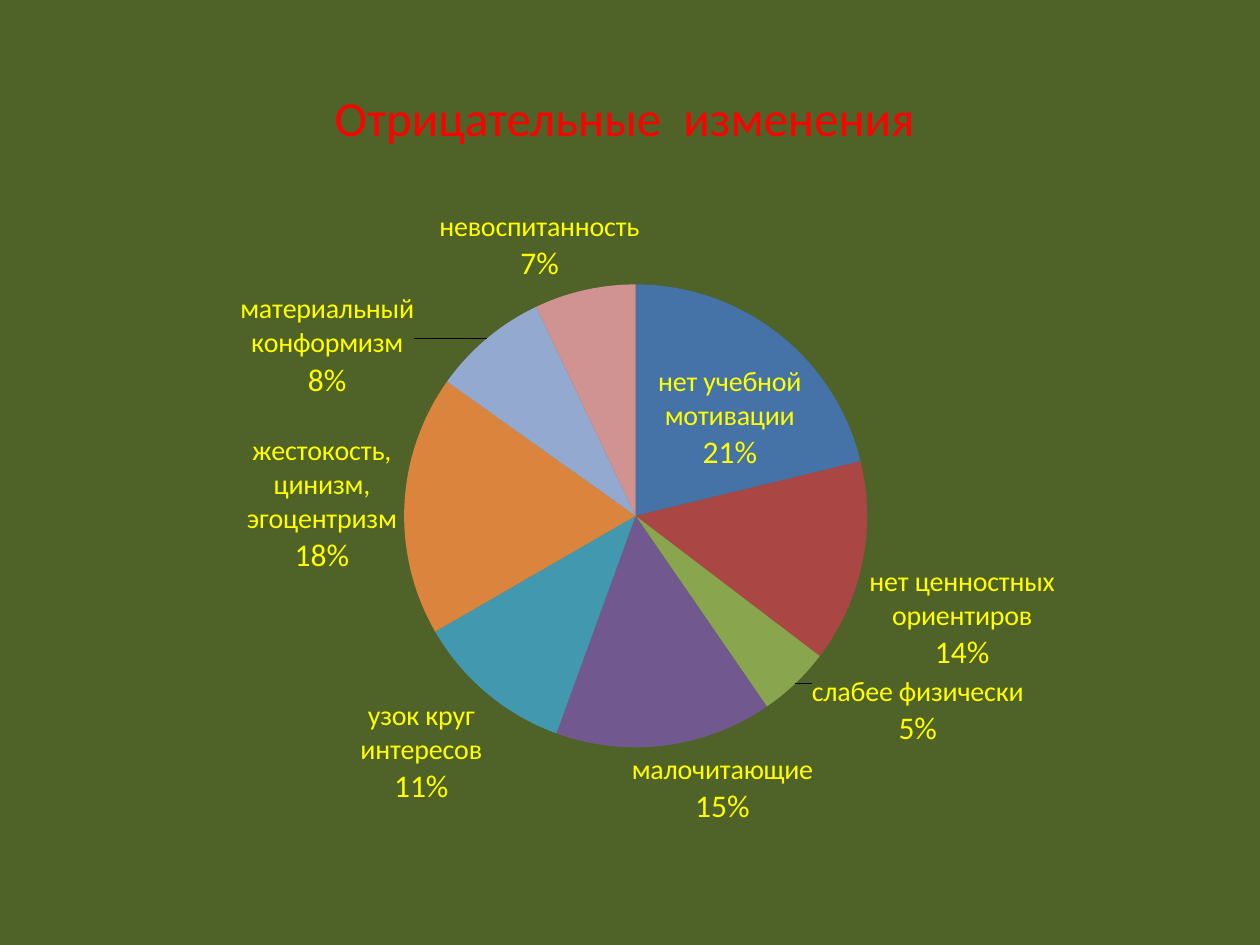
from lxml.etree import Element, SubElement
from pptx import Presentation
from pptx.chart.data import CategoryChartData
from pptx.dml.color import RGBColor
from pptx.enum.chart import XL_CHART_TYPE as ChartType, XL_LABEL_POSITION as LabelPosition
from pptx.enum.text import MSO_ANCHOR as Anchor, PP_ALIGN as Align
from pptx.oxml.ns import qn
from pptx.util import Inches, Pt

WIDTH, HEIGHT = Inches(10), Inches(7.5)
FONT = "Calibri"
TITLE_BOX = (0.05, 0.04, 0.9, 0.167)
CHART_BOX = (0.05, 0.196, 0.9, 0.7)
PIE_AREA = {"layoutTarget": "inner", "xMode": "edge", "yMode": "edge",
            "x": 0.3, "y": 0.15, "w": 0.41, "h": 0.7}
CHANGES = [
    ("нет учебной мотивации", 0.21, "4572A7", (0.02, -0.01)),
    ("нет ценностных ориентиров", 0.14, "AA4643", None),
    ("слабее физически", 0.05, "89A54E", (0.01, -0.02)),
    ("малочитающие", 0.15, "71588F", (-0.03, 0)),
    ("узок круг интересов", 0.11, "4198AF", None),
    ("жестокость, цинизм, эгоцентризм", 0.18, "DB843D", None),
    ("материальный конформизм", 0.08, "93A9CF", (-0.06, 0.1)),
    ("невоспитанность", 0.07, "D19392", (0.05, 0)),
]


def color(value):
    return RGBColor.from_string(value)


def place(box):
    left, top, width, height = box
    return [int(share * side) for share, side in
            ((left, WIDTH), (top, HEIGHT), (width, WIDTH), (height, HEIGHT))]


def set_font(font, size, fill):
    for name, value in {"name": FONT, "size": Pt(size), "bold": False}.items():
        setattr(font, name, value)
    font.color.rgb = color(fill)


def paint_background(slide, fill):
    slide.background.fill.solid()
    slide.background.fill.fore_color.rgb = color(fill)


def write_title(slide, text):
    title = slide.shapes.title
    for name, value in zip(("left", "top", "width", "height"), place(TITLE_BOX)):
        setattr(title, name, value)
    title.text_frame.vertical_anchor = Anchor.MIDDLE
    paragraph = title.text_frame.paragraphs[0]
    paragraph.alignment = Align.CENTER
    run = paragraph.add_run()
    run.text = text
    set_font(run.font, 28, "FF0000")


def set_layout(parent, position, settings):
    for old in parent.findall(qn("c:layout")):
        parent.remove(old)
    layout = Element(qn("c:layout"))
    manual = SubElement(layout, qn("c:manualLayout"))
    for name, value in settings.items():
        SubElement(manual, qn(f"c:{name}")).set("val", str(value))
    parent.insert(position, layout)


def write_label(point, category, value, position, shift):
    label = point.data_label
    frame = label.text_frame
    lines = ((frame.paragraphs[0], category, 16),
             (frame.add_paragraph(), f"{value:.0%}", 18))
    for paragraph, text, size in lines:
        run = paragraph.add_run()
        run.text = text
        set_font(run.font, size, "FFFF00")
    label.position = position
    element = frame._txBody.getparent().getparent()
    element.find(qn("c:showCatName")).set("val", "1")
    if shift:
        set_layout(element, 1, dict(zip("xy", shift)))


def add_pie(slide):
    data = CategoryChartData(number_format="0%")
    data.categories = [change[0] for change in CHANGES]
    data.add_series("Series 1", [change[1] for change in CHANGES])
    chart = slide.shapes.add_chart(ChartType.PIE, *place(CHART_BOX), data).chart
    chart.has_legend = False
    chart.has_title = False
    set_font(chart.font, 10, "FFFFFF")
    set_layout(chart._chartSpace.chart.plotArea, 0, PIE_AREA)
    plot = chart.plots[0]
    plot.vary_by_categories = True
    series = plot.series[0]
    for index, (category, value, fill, shift) in enumerate(CHANGES):
        point = series.points[index]
        point.format.fill.solid()
        point.format.fill.fore_color.rgb = color(fill)
        position = LabelPosition.OUTSIDE_END if index else LabelPosition.CENTER
        write_label(point, category, value, position, shift)
    labels = series.data_labels
    for name, value in {"show_value": True, "show_category_name": True,
                        "show_percentage": False, "number_format": "0%",
                        "number_format_is_linked": False}.items():
        setattr(labels, name, value)
    set_font(labels.font, 16, "FFFF00")


def main():
    presentation = Presentation()
    presentation.slide_width, presentation.slide_height = WIDTH, HEIGHT
    slide = presentation.slides.add_slide(presentation.slide_layouts[5])
    paint_background(slide, "4F6228")
    write_title(slide, "Отрицательные  изменения ")
    add_pie(slide)
    presentation.save("out.pptx")


if __name__ == "__main__":
    main()
